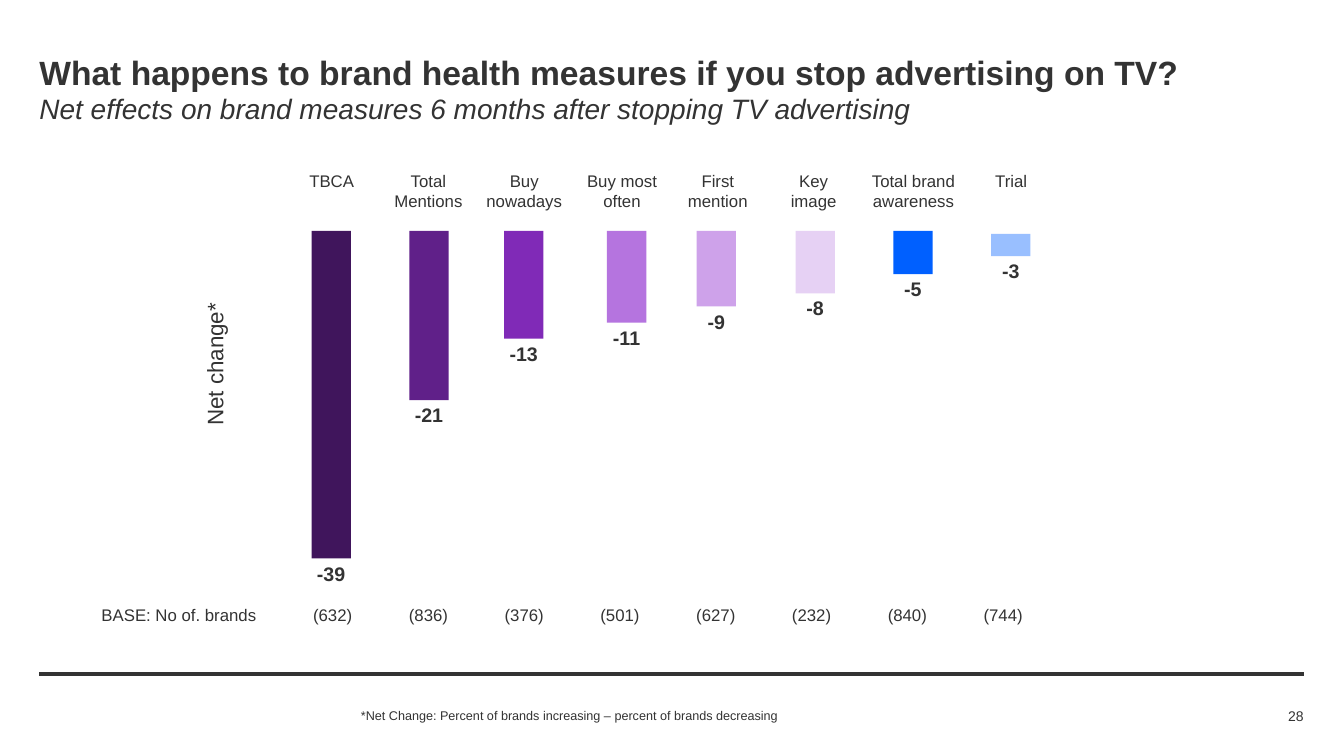
from collections import namedtuple

from lxml.etree import SubElement
from pptx import Presentation
from pptx.dml.color import RGBColor
from pptx.enum.shapes import MSO_CONNECTOR, MSO_SHAPE
from pptx.enum.text import MSO_ANCHOR, MSO_AUTO_SIZE, PP_ALIGN
from pptx.oxml.ns import qn
from pptx.util import Inches, Pt

SLIDE_WIDTH, SLIDE_HEIGHT = 13.33, 7.5
MARGIN = 0.39
CONTENT_WIDTH = 12.54
FONT, INK = "Arial", "333333"
BAR_WIDTH = 0.39
HEADING_WIDTH = 0.97
VALUE_WIDTH, VALUE_GAP = 0.7, 0.03
BASE_WIDTH, BASE_STEP = 0.76, 0.95

Box = namedtuple("Box", "left top width height")
Measure = namedtuple("Measure", "heading center bar_left bar_top bar_height value base color")

MEASURES = [
    Measure(["TBCA"], 2.4, 2.2, 0.6, 3.25, "-39", "(632)", "40155C"),
    Measure(["Total", "Mentions"], 3.36, 3.17, 0.6, 1.68, "-21", "(836)", "602089"),
    Measure(["Buy", "nowadays"], 4.31, 4.11, 0.6, 1.07, "-13", "(376)", "802AB7"),
    Measure(["Buy most often"], 5.28, 5.13, 0.6, 0.91, "-11", "(501)", "B574DF"),
    Measure(["First", "mention"], 6.23, 6.02, 0.6, 0.75, "-9", "(627)", "CEA2EA"),
    Measure(["Key", "image"], 7.18, 7.0, 0.6, 0.62, "-8", "(232)", "E6D1F4"),
    Measure(["Total brand awareness"], 8.17, 7.97, 0.6, 0.43, "-5", "(840)", "0060FF"),
    Measure(["Trial"], 9.14, 8.94, 0.63, 0.22, "-3", "(744)", "99BFFF"),
]


def color(hex_string):
    """Turn a hex string into a colour."""
    return RGBColor.from_string(hex_string)


def place(shape, box):
    """Move and size a shape to fill a box."""
    shape.left, shape.top, shape.width, shape.height = (Inches(length) for length in box)


def prepare_frame(text_frame, anchor):
    """Remove the margins, wrap the text and fix its anchor."""
    text_frame.margin_left = text_frame.margin_right = 0
    text_frame.margin_top = text_frame.margin_bottom = 0
    text_frame.word_wrap = True
    text_frame.auto_size = MSO_AUTO_SIZE.NONE
    text_frame.vertical_anchor = anchor


def add_run(paragraph, text, size, bold=False, italic=False):
    """Add one formatted run to a paragraph."""
    run = paragraph.add_run()
    run.text = text
    run.font.name = FONT
    run.font.size = Pt(size)
    run.font.bold = bold
    run.font.italic = italic
    run.font.color.rgb = color(INK)


def add_text(slide, box, lines, size, align=PP_ALIGN.CENTER, anchor=MSO_ANCHOR.TOP, bold=False):
    """Add a text box with one paragraph for each line."""
    shape = slide.shapes.add_textbox(*(Inches(length) for length in box))
    prepare_frame(shape.text_frame, anchor)
    for index, line in enumerate(lines):
        paragraph = shape.text_frame.add_paragraph() if index else shape.text_frame.paragraphs[0]
        paragraph.alignment = align
        add_run(paragraph, line, size, bold)
    return shape


def add_title(slide, box):
    """Fill the title placeholder with the question and its subtitle."""
    title = slide.shapes.title
    place(title, box)
    prepare_frame(title.text_frame, MSO_ANCHOR.TOP)
    paragraph = title.text_frame.paragraphs[0]
    paragraph.alignment = PP_ALIGN.LEFT
    add_run(paragraph, "What happens to brand health measures if you stop advertising on TV?", 24, bold=True)
    paragraph.add_line_break()
    add_run(paragraph, "Net effects on brand measures 6 months after stopping TV advertising", 20, italic=True)


def add_measure(slide, box, measure):
    """Draw the heading, bar and value of one brand measure."""
    heading_left = box.left + measure.center - HEADING_WIDTH / 2
    add_text(slide, Box(heading_left, box.top, HEADING_WIDTH, 0.4), measure.heading, 12)

    bar_box = Box(box.left + measure.bar_left, box.top + measure.bar_top, BAR_WIDTH, measure.bar_height)
    bar = slide.shapes.add_shape(MSO_SHAPE.RECTANGLE, *(Inches(length) for length in bar_box))
    bar.shadow.inherit = False
    bar.fill.solid()
    bar.fill.fore_color.rgb = color(measure.color)
    bar.line.fill.background()

    value_left = bar_box.left + (BAR_WIDTH - VALUE_WIDTH) / 2
    value_top = bar_box.top + bar_box.height + VALUE_GAP
    add_text(slide, Box(value_left, value_top, VALUE_WIDTH, 0.24), [measure.value], 14, bold=True)


def add_net_change(slide, box):
    """Draw the bars with their axis title and the row of bases."""
    axis_title = add_text(slide, Box(box.left + 0.44, box.top + 1.6, 1.6, 0.27),
                          ["Net change*"], 16, PP_ALIGN.LEFT)
    axis_title.rotation = 270
    base_top = box.top + box.height - 0.2
    add_text(slide, Box(box.left, base_top, 1.77, 0.2), ["BASE: No of. brands"], 12)
    for index, measure in enumerate(MEASURES):
        add_measure(slide, box, measure)
        base_left = box.left + 2.03 + index * BASE_STEP
        add_text(slide, Box(base_left, base_top, BASE_WIDTH, 0.2), [measure.base], 12)


def add_footer(slide, box):
    """Draw the rule, the footnote and the page number."""
    rule = slide.shapes.add_connector(
        MSO_CONNECTOR.STRAIGHT, Inches(box.left), Inches(box.top),
        Inches(box.left + box.width), Inches(box.top))
    rule.line.color.rgb = color(INK)
    rule.line.width = Pt(3)
    SubElement(rule.element.spPr, qn("a:effectLst"))

    text_top = box.top + box.height - 0.22
    add_text(slide, Box(box.left + 3.19, text_top, 8.2, 0.22),
             ["*Net Change: Percent of brands increasing – percent of brands decreasing"],
             9, PP_ALIGN.LEFT, MSO_ANCHOR.MIDDLE)
    add_text(slide, Box(box.left + box.width - 1.06, text_top, 1.06, 0.22),
             ["28"], 10, PP_ALIGN.RIGHT, MSO_ANCHOR.MIDDLE)


def main():
    """Build the slide and save it."""
    presentation = Presentation()
    presentation.slide_width = Inches(SLIDE_WIDTH)
    presentation.slide_height = Inches(SLIDE_HEIGHT)
    slide = presentation.slides.add_slide(presentation.slide_layouts[5])
    add_title(slide, Box(MARGIN, 0.51, CONTENT_WIDTH, 0.44))
    add_net_change(slide, Box(0.89, 1.69, 9.62, 4.51))
    add_footer(slide, Box(MARGIN, 6.69, CONTENT_WIDTH, 0.52))
    presentation.save("out.pptx")


if __name__ == "__main__":
    main()
